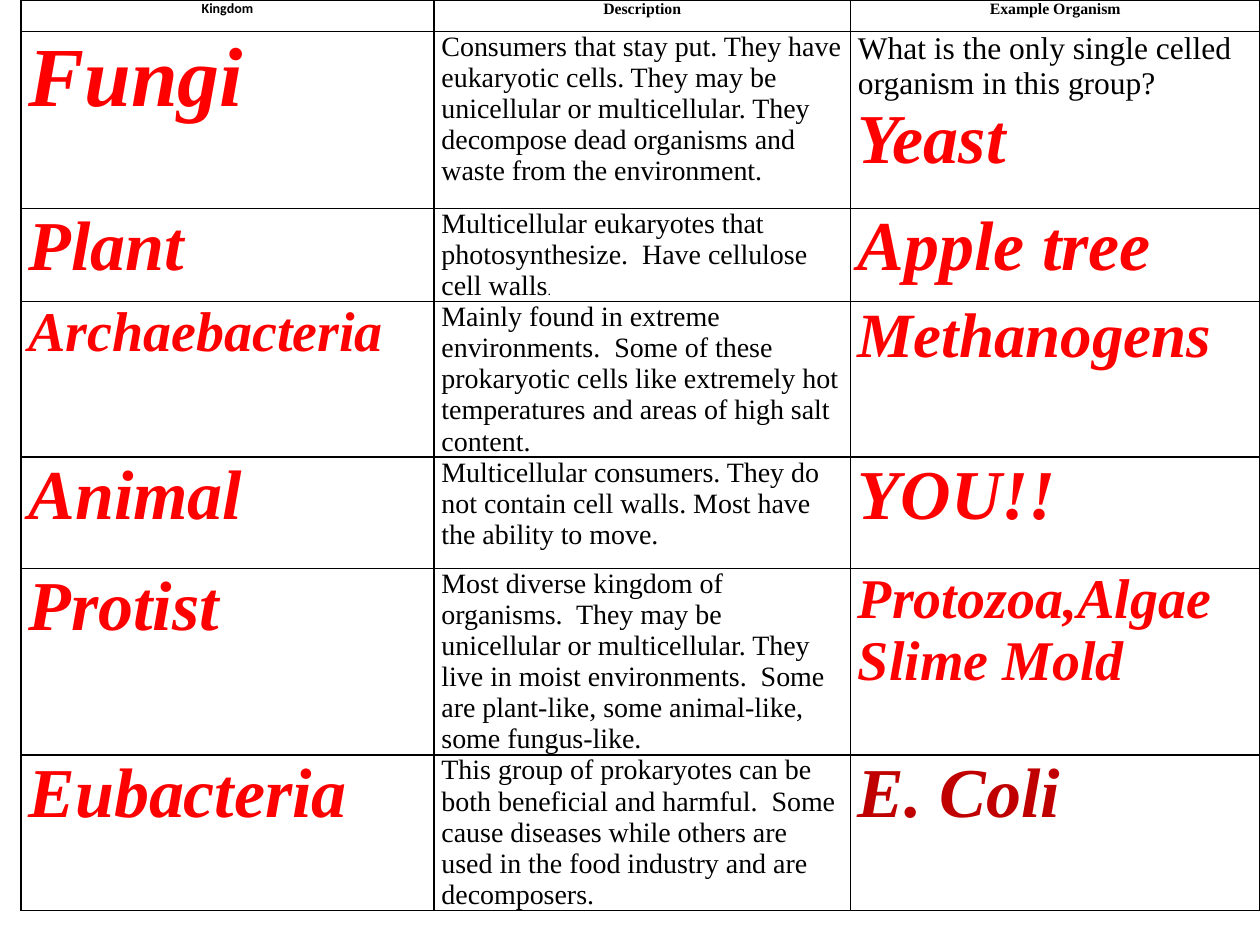
import dataclasses

import lxml.etree
import pptx
import pptx.dml.color
import pptx.enum.text
import pptx.oxml.ns
import pptx.util

Pt = pptx.util.Pt
ALIGN = pptx.enum.text.PP_ALIGN


@dataclasses.dataclass(frozen=True)
class Theme:
    ink: str = "000000"
    answer: str = "FF0000"
    deep_answer: str = "C00000"
    paper: str = "FFFFFF"
    serif: str = "Times New Roman"
    sans: str = "Calibri"
    tiny: float = 8
    heading: float = 9
    body: float = 16
    question: float = 18
    small_answer: float = 32
    medium_answer: float = 36
    large_answer: float = 40
    huge_answer: float = 48
    border: float = 1
    inset: float = 4.3


THEME = Theme()


def write(paragraph, text, *, size=THEME.body, color=THEME.ink, font=THEME.serif,
          bold=False, italic=False, align=ALIGN.LEFT):
    paragraph.alignment = align
    run = paragraph.add_run()
    run.text = text
    run.font.size = Pt(size)
    run.font.name = font
    run.font.bold = bold
    run.font.italic = italic
    run.font.color.rgb = pptx.dml.color.RGBColor.from_string(color)


def heading(text, **style):
    return [[(text, {"size": THEME.heading, "bold": True, "align": ALIGN.CENTER, **style})]]


def body(text, size=THEME.body):
    return [[(text, {"size": size})]]


def answer(text, size=THEME.large_answer, color=THEME.answer):
    return [[(text, {"size": size, "color": color, "bold": True, "italic": True})]]


class SlideBuilder:
    def __init__(self, slide, theme):
        self.slide = slide
        self.theme = theme

    def table(self, left, top, widths, heights, rows):
        frame = self.slide.shapes.add_table(len(rows), len(widths), Pt(left), Pt(top),
                                            Pt(sum(widths)), Pt(sum(heights)))
        grid = frame.table
        grid.first_row = grid.horz_banding = False
        for column, width in zip(grid.columns, widths):
            column.width = Pt(width)
        for row, height, contents in zip(grid.rows, heights, rows):
            row.height = Pt(height)
            for cell, paragraphs in zip(row.cells, contents):
                self.cell(cell, paragraphs)

    def cell(self, cell, paragraphs):
        cell.margin_left = cell.margin_right = Pt(self.theme.inset)
        cell.margin_top = cell.margin_bottom = 0
        self.borders(cell)
        cell.fill.solid()
        cell.fill.fore_color.rgb = pptx.dml.color.RGBColor.from_string(self.theme.paper)
        frame = cell.text_frame
        for index, runs in enumerate(paragraphs):
            paragraph = frame.add_paragraph() if index else frame.paragraphs[0]
            for text, style in runs:
                write(paragraph, text, **style)

    def borders(self, cell):
        qn = pptx.oxml.ns.qn
        properties = cell._tc.get_or_add_tcPr()
        for side in ("a:lnL", "a:lnR", "a:lnT", "a:lnB"):
            line = lxml.etree.SubElement(properties, qn(side), w=str(Pt(self.theme.border)))
            fill = lxml.etree.SubElement(line, qn("a:solidFill"))
            lxml.etree.SubElement(fill, qn("a:srgbClr"), val=self.theme.ink)


KINGDOMS = [
    [heading("Kingdom", size=THEME.tiny, font=THEME.sans),
     heading("Description"),
     heading("Example Organism")],
    [answer("Fungi", THEME.huge_answer),
     body("Consumers that stay put. They have eukaryotic cells. They may be unicellular or "
          "multicellular. They decompose dead organisms and waste from the environment."),
     body("What is the only single celled organism in this group?", THEME.question)
     + answer("Yeast")],
    [answer("Plant"),
     [[("Multicellular eukaryotes that photosynthesize.  Have cellulose cell walls", {}),
       (".", {"size": THEME.tiny})]],
     answer("Apple tree")],
    [answer("Archaebacteria", THEME.small_answer),
     body("Mainly found in extreme environments.  Some of these prokaryotic cells like "
          "extremely hot temperatures and areas of high salt content."),
     answer("Methanogens", THEME.medium_answer)],
    [answer("Animal"),
     body("Multicellular consumers. They do not contain cell walls. Most have the ability "
          "to move."),
     answer("YOU!!")],
    [answer("Protist"),
     body("Most diverse kingdom of organisms.  They may be unicellular or multicellular. "
          "They live in moist environments.  Some are plant-like, some animal-like, some "
          "fungus-like."),
     answer("Protozoa,Algae Slime Mold", THEME.small_answer)],
    [answer("Eubacteria"),
     body("This group of prokaryotes can be both beneficial and harmful.  Some cause "
          "diseases while others are used in the food industry and are decomposers."),
     answer("E. Coli", color=THEME.deep_answer)],
]


def main():
    deck = pptx.Presentation()
    deck.slide_width, deck.slide_height = Pt(720), Pt(540)
    builder = SlideBuilder(deck.slides.add_slide(deck.slide_layouts[6]), THEME)
    builder.table(12, 0, widths=[236, 238, 234],
                  heights=[18, 101, 50.5, 84, 63.5, 102, 84], rows=KINGDOMS)
    deck.save("out.pptx")


if __name__ == "__main__":
    main()
